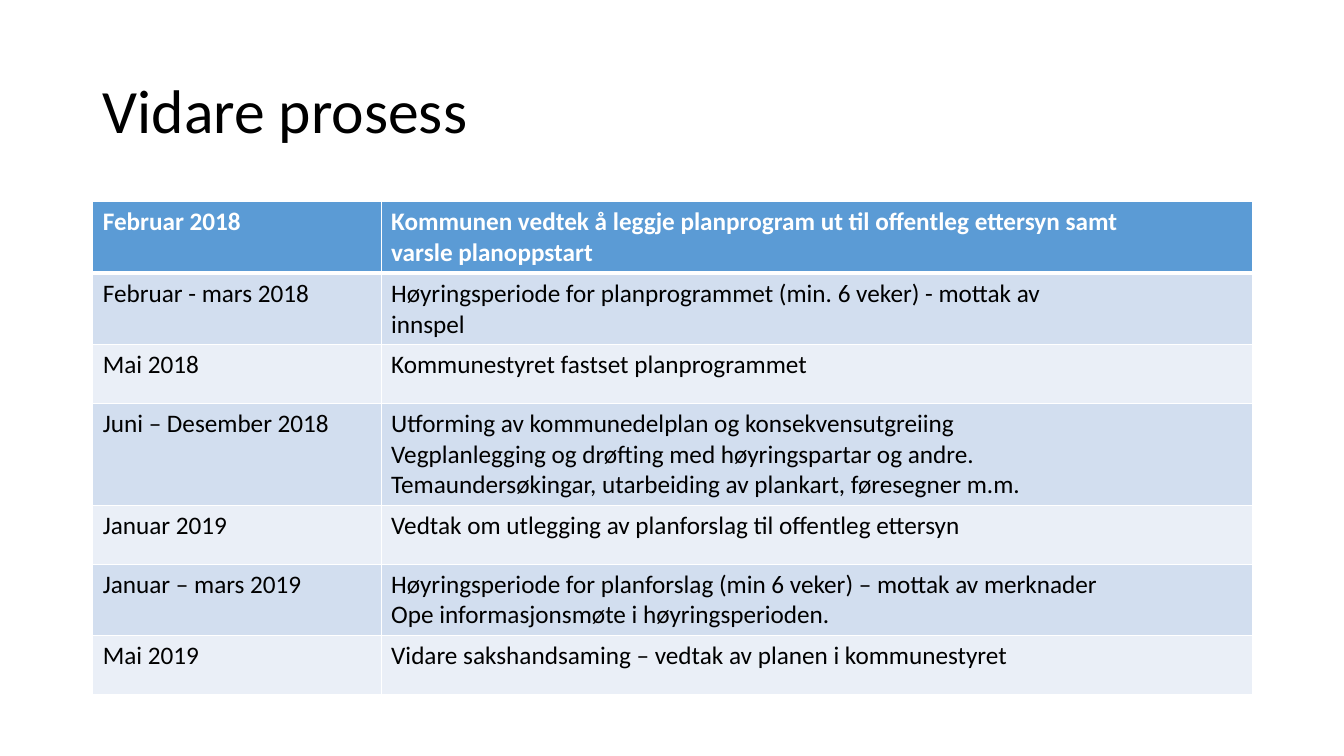
from lxml.etree import SubElement
from pptx import Presentation
from pptx.dml.color import RGBColor
from pptx.enum.text import MSO_ANCHOR, PP_ALIGN
from pptx.oxml.ns import qn
from pptx.util import Inches, Pt

COLOURS = {
    "text": "000000",
    "header_text": "FFFFFF",
    "border": "FFFFFF",
    "header": "5B9BD5",
    "odd_row": "D2DEEF",
    "even_row": "EAEFF7",
}
FONT = "Calibri"
SLIDE_WIDTH, SLIDE_HEIGHT = Inches(13.33), Inches(7.5)
MARGIN = Inches(0.92)
CONTENT_WIDTH = Inches(11.5)
PERIOD_WIDTH = Inches(2.86)
ROW_HEIGHT = Inches(0.58)
PROCESS_STEPS = [
    ("Februar 2018", ["Kommunen vedtek å leggje planprogram ut til offentleg ettersyn samt",
                      "varsle planoppstart"]),
    ("Februar - mars 2018", ["Høyringsperiode for planprogrammet (min. 6 veker) - mottak av",
                             "innspel"]),
    ("Mai 2018", ["Kommunestyret fastset planprogrammet"]),
    ("Juni – Desember 2018", ["Utforming av kommunedelplan og konsekvensutgreiing",
                              "Vegplanlegging og drøfting med høyringspartar og andre.",
                              "Temaundersøkingar, utarbeiding av plankart, føresegner m.m."]),
    ("Januar 2019", ["Vedtak om utlegging av planforslag til offentleg ettersyn"]),
    ("Januar – mars 2019", ["Høyringsperiode for planforslag (min 6 veker) – mottak av merknader",
                            "Ope informasjonsmøte i høyringsperioden."]),
    ("Mai 2019", ["Vidare sakshandsaming – vedtak av planen i kommunestyret"]),
]


def write_text(text_frame, lines, size=18, colour="text", bold=False, line_spacing=1.0):
    for index, line in enumerate(lines):
        paragraph = text_frame.paragraphs[0] if index == 0 else text_frame.add_paragraph()
        paragraph.alignment = PP_ALIGN.LEFT
        paragraph.line_spacing = line_spacing
        run = paragraph.add_run()
        run.text = line
        run.font.name = FONT
        run.font.size = Pt(size)
        run.font.bold = bold
        run.font.color.rgb = RGBColor.from_string(COLOURS[colour])


def set_borders(cell, **widths):
    properties = cell._tc.get_or_add_tcPr()
    for side in "LRTB":
        line = SubElement(properties, qn(f"a:ln{side}"), w=str(Pt(widths.get(side, 1))))
        fill = SubElement(line, qn("a:solidFill"))
        SubElement(fill, qn("a:srgbClr"), val=COLOURS["border"])


def fill_cell(cell, colour):
    cell.fill.solid()
    cell.fill.fore_color.rgb = RGBColor.from_string(COLOURS[colour])


def add_title(slide, text):
    title = slide.shapes.title
    title.left, title.top = MARGIN, Inches(0.4)
    title.width, title.height = CONTENT_WIDTH, Inches(1.45)
    title.text_frame.vertical_anchor = MSO_ANCHOR.MIDDLE
    write_text(title.text_frame, [text], size=44, line_spacing=0.9)


def add_process_table(slide, steps):
    frame = slide.shapes.add_table(len(steps), 2, MARGIN, Inches(2),
                                   CONTENT_WIDTH, ROW_HEIGHT * len(steps))
    table = frame.table
    table.columns[0].width = PERIOD_WIDTH
    table.columns[1].width = CONTENT_WIDTH - PERIOD_WIDTH
    for index, (period, activities) in enumerate(steps):
        header = index == 0
        row_colour = "header" if header else ("odd_row" if index % 2 else "even_row")
        for cell, lines in zip(table.rows[index].cells, ([period], activities)):
            set_borders(cell, T=3 if index == 1 else 1, B=3 if header else 1)
            fill_cell(cell, row_colour)
            write_text(cell.text_frame, lines, bold=header,
                       colour="header_text" if header else "text")


def main():
    presentation = Presentation()
    presentation.slide_width, presentation.slide_height = SLIDE_WIDTH, SLIDE_HEIGHT
    slide = presentation.slides.add_slide(presentation.slide_layouts.get_by_name("Title Only"))
    add_title(slide, "Vidare prosess")
    add_process_table(slide, PROCESS_STEPS)
    presentation.save("out.pptx")


if __name__ == "__main__":
    main()
